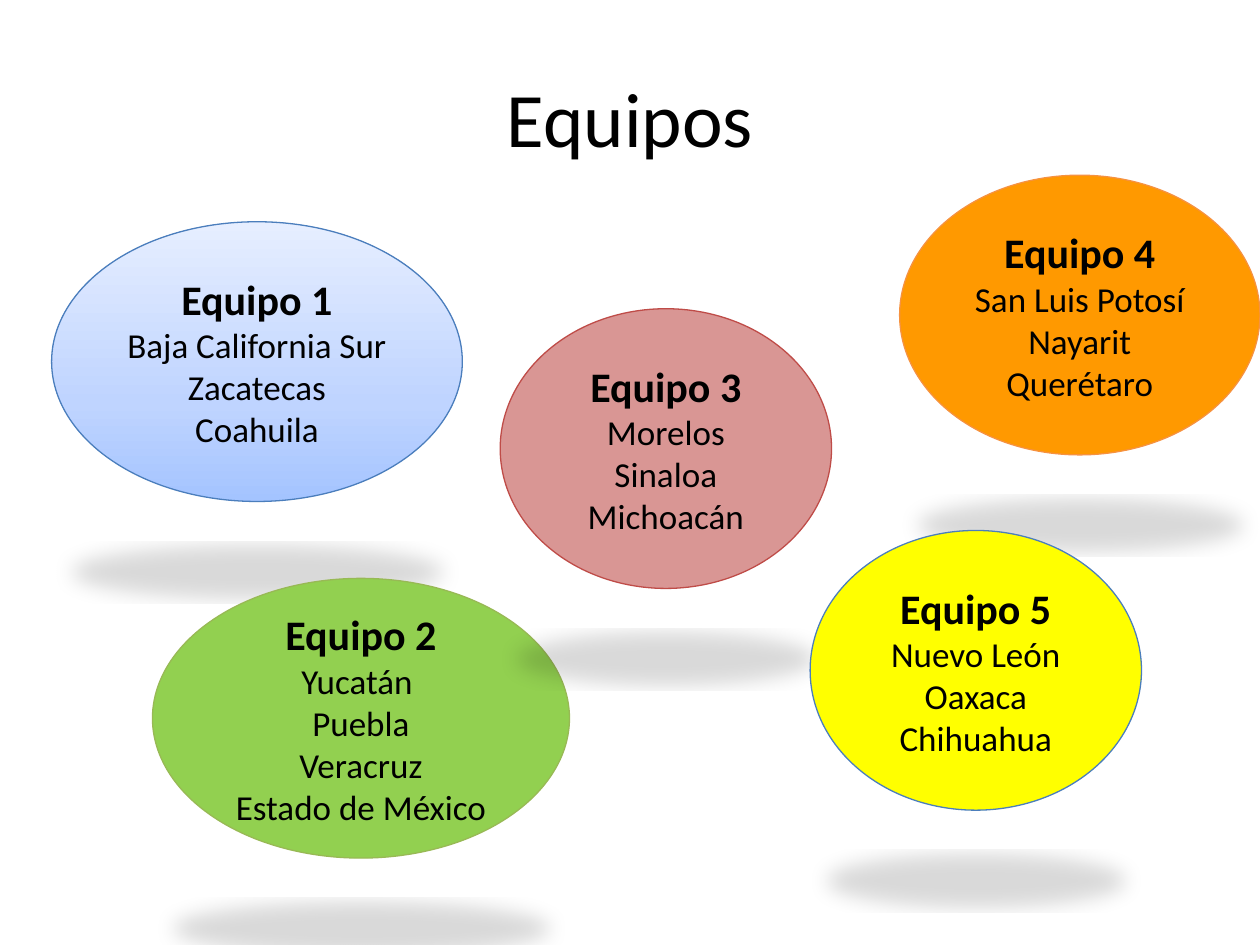
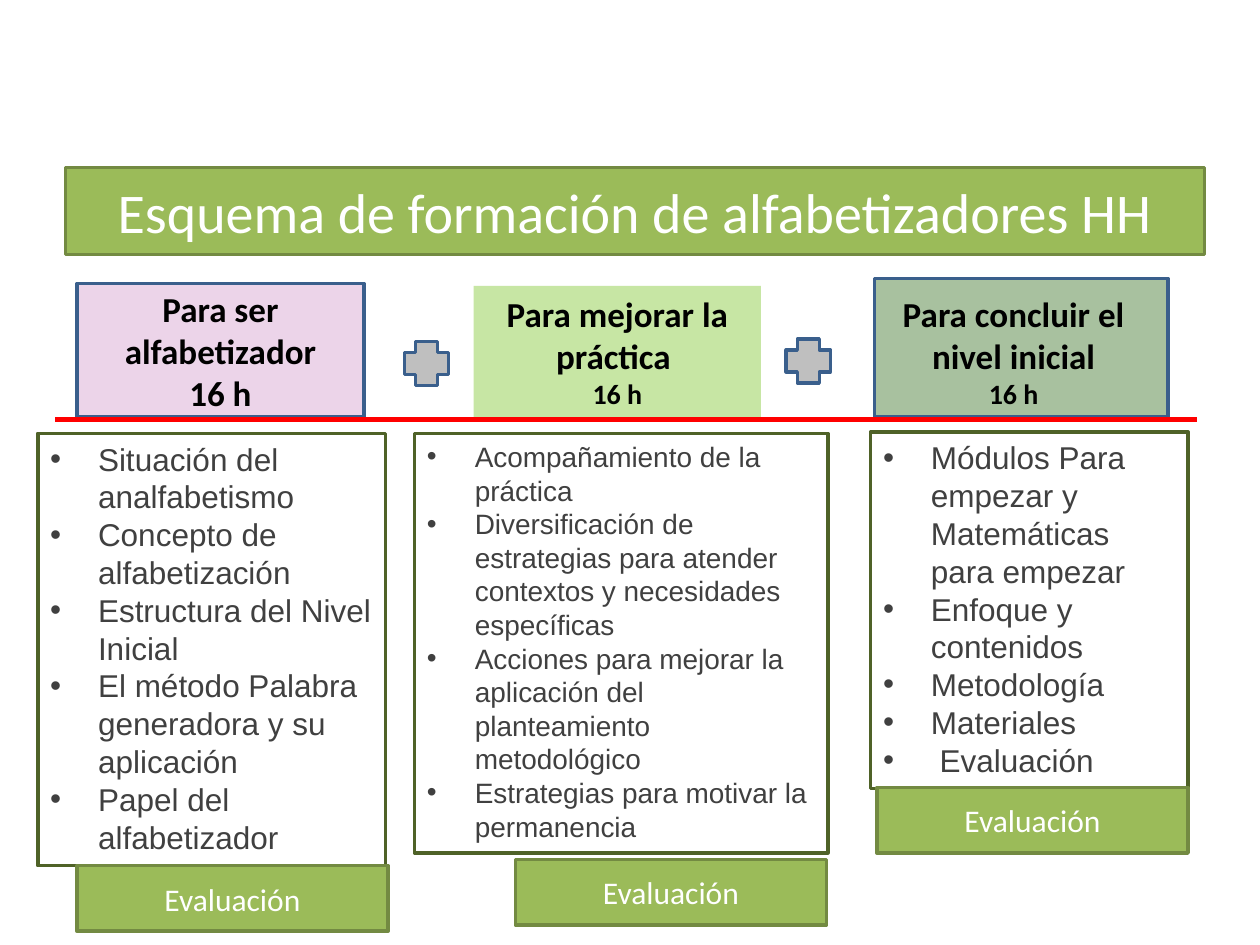
"""Builds two slides: the teams and the training scheme for literacy teachers."""
from lxml import etree
from pptx import Presentation
from pptx.dml.color import RGBColor
from pptx.enum.shapes import MSO_CONNECTOR, MSO_SHAPE
from pptx.enum.text import MSO_ANCHOR, PP_ALIGN
from pptx.oxml import parse_xml
from pptx.oxml.ns import nsdecls, qn
from pptx.util import Pt

PX = 9144
SLIDE_SIZE = (1000, 750)
COLORS = {
    "black": "000000", "white": "FFFFFF", "body": "404040", "red": "FF0000",
    "sky_dark": "A4C4FF", "sky_mid": "BFD4FF", "sky_light": "E6EEFF",
    "blue_edge": "4B7EBC", "lime": "92D050", "lime_edge": "98B955",
    "orange": "FF9900", "orange_edge": "F69240", "rose": "D99694",
    "rose_edge": "BF4C48", "yellow": "FFFF00", "navy": "3A5F8C",
    "lilac": "ECD4E9", "mint": "C7E6A4", "sage": "A8C19F", "gray": "BFBFBF",
    "forest": "4F6228", "green": "9BBB59", "green_edge": "738A42",
}

TEAMS_TITLE = ("Equipos", (50, 30, 900, 125))
SKY = [(0, "sky_dark"), (35, "sky_mid"), (100, "sky_light")]
TEAMS = [
    ("Equipo 1", ["Baja California Sur", "Zacatecas", "Coahuila"],
     (41, 176, 326), SKY, "blue_edge"),
    ("Equipo 2", ["Yucatán ", "Puebla", "Veracruz", "Estado de México"],
     (121, 459, 331), "lime", "lime_edge"),
    ("Equipo 4", ["San Luis Potosí", "Nayarit", "Querétaro"],
     (714, 139, 286), "orange", "orange_edge"),
    ("Equipo 3", ["Morelos", "Sinaloa", "Michoacán"],
     (397, 245, 263), "rose", "rose_edge"),
    ("Equipo 5", ["Nuevo León", "Oaxaca", "Chihuahua"],
     (643, 421, 263), "yellow", "blue_edge"),
]
TEAM_HEIGHT = 222

SCHEME_TITLE = ("Esquema de formación de alfabetizadores HH", (52, 133, 904, 69))
HOURS = "16 h"
STAGES = [
    {"name": "Para ser alfabetizador", "hours_size": 20, "fill": "lilac", "edge": "navy",
     "box": (61, 225, 228, 106), "text_box": (61, 225, 228, 106), "anchor": MSO_ANCHOR.MIDDLE,
     "topics": ["Situación del analfabetismo", "Concepto de alfabetización",
                "Estructura del Nivel Inicial",
                "El método Palabra generadora y su aplicación", "Papel del alfabetizador"],
     "topics_box": (30, 344, 276, 343), "topic_size": 18, "evaluation": (61, 687)},
    {"name": "Para mejorar la práctica ", "hours_size": 16, "fill": "mint", "edge": None,
     "box": (376, 227, 228, 104), "text_box": (376, 227, 228, 104), "anchor": MSO_ANCHOR.TOP,
     "topics": ["Acompañamiento de la práctica",
                "Diversificación de estrategias para atender contextos y necesidades específicas",
                "Acciones para mejorar la aplicación del planteamiento metodológico",
                "Estrategias para motivar la permanencia"],
     "topics_box": (329, 344, 328, 333), "topic_size": 16, "evaluation": (409, 682)},
    {"name": "Para concluir el nivel inicial", "hours_size": 16, "fill": "sage", "edge": "navy",
     "box": (694, 221, 233, 110), "text_box": (688, 227, 233, 104), "anchor": MSO_ANCHOR.TOP,
     "topics": ["Módulos Para empezar y Matemáticas para empezar", "Enfoque y contenidos",
                "Metodología", "Materiales", " Evaluación"],
     "topics_box": (691, 343, 252, 283), "topic_size": 18, "evaluation": (696, 625)},
]
PLUSES = [(321, 271), (624, 269)]
PLUS_SIDE = 35
DIVIDER = (44, 333, 950, 333)
EVALUATION = "Evaluación"
EVALUATION_SIZE = (247, 52)
BULLET_INDENT = 38


def emu(lengths):
    return [length * PX for length in lengths]


def rgb(name):
    return RGBColor.from_string(COLORS[name])


def add_box(slide, box, fill, edge=None, width=2, preset=MSO_SHAPE.RECTANGLE):
    shape = slide.shapes.add_shape(preset, *emu(box))
    shape.shadow.inherit = False
    if isinstance(fill, list):
        fill_gradient(shape, fill)
    else:
        shape.fill.solid()
        shape.fill.fore_color.rgb = rgb(fill)
    if edge:
        shape.line.color.rgb = rgb(edge)
        shape.line.width = Pt(width)
    else:
        shape.line.fill.background()
    return shape


def fill_gradient(shape, stops):
    marks = "".join(f'<a:gs pos="{place * 1000}"><a:srgbClr val="{COLORS[name]}"/></a:gs>'
                    for place, name in stops)
    gradient = parse_xml(f'<a:gradFill {nsdecls("a")} rotWithShape="1"><a:gsLst>{marks}</a:gsLst>'
                         '<a:lin ang="16200000" scaled="0"/></a:gradFill>')
    shape._element.spPr.find(qn("a:prstGeom")).addnext(gradient)


def cast_floor_shadow(shape):
    effects = shape._element.spPr.find(qn("a:effectLst"))
    effects.append(parse_xml(
        f'<a:outerShdw {nsdecls("a")} blurRad="152400" dist="317500" dir="5400000" '
        'sx="90000" sy="-19000" rotWithShape="0">'
        f'<a:srgbClr val="{COLORS["black"]}"><a:alpha val="15000"/></a:srgbClr></a:outerShdw>'))


def add_bullet(paragraph):
    properties = paragraph._p.get_or_add_pPr()
    properties.set("marL", str(BULLET_INDENT * PX))
    properties.set("indent", str(-BULLET_INDENT * PX))
    etree.SubElement(properties, qn("a:buFont")).set("typeface", "Arial")
    etree.SubElement(properties, qn("a:buChar")).set("char", "•")


def write(shape, lines, color="black", font="Calibri", anchor=MSO_ANCHOR.MIDDLE, bulleted=False):
    frame = shape.text_frame
    frame.word_wrap = True
    frame.vertical_anchor = anchor
    for index, (text, size, bold) in enumerate(lines):
        paragraph = frame.add_paragraph() if index else frame.paragraphs[0]
        paragraph.text = text
        paragraph.alignment = PP_ALIGN.LEFT if bulleted else PP_ALIGN.CENTER
        if bulleted:
            add_bullet(paragraph)
        paragraph.font.name = font
        paragraph.font.size = Pt(size)
        paragraph.font.bold = bold
        paragraph.font.color.rgb = rgb(color)


def add_green_band(slide, text, box, size):
    write(add_box(slide, box, "green", "green_edge"), [(text, size, False)], "white")


def build_teams(slide):
    title, title_box = TEAMS_TITLE
    write(slide.shapes.add_textbox(*emu(title_box)), [(title, 44, False)])
    for team, states, place, fill, edge in TEAMS:
        oval = add_box(slide, (*place, TEAM_HEIGHT), fill, edge, 0.75, MSO_SHAPE.OVAL)
        cast_floor_shadow(oval)
        write(oval, [(team, 24, True)] + [(state, 20, False) for state in states])


def build_scheme(slide):
    for stage in STAGES:
        heading = add_box(slide, stage["box"], stage["fill"], stage["edge"])
        if stage["text_box"] != stage["box"]:
            heading = slide.shapes.add_textbox(*emu(stage["text_box"]))
        write(heading, [(stage["name"], 20, True), (HOURS, stage["hours_size"], True)],
              anchor=stage["anchor"])
    for place in PLUSES:
        add_box(slide, (*place, PLUS_SIDE, PLUS_SIDE), "gray", "navy", preset=MSO_SHAPE.CROSS)
    for stage in STAGES:
        write(add_box(slide, stage["topics_box"], "white", "forest"),
              [(topic, stage["topic_size"], False) for topic in stage["topics"]],
              "body", "Arial", MSO_ANCHOR.TOP, bulleted=True)
    divider = slide.shapes.add_connector(MSO_CONNECTOR.STRAIGHT, *emu(DIVIDER))
    divider.line.color.rgb = rgb("red")
    divider.line.width = Pt(3)
    etree.SubElement(divider._element.spPr, qn("a:effectLst"))
    add_green_band(slide, *SCHEME_TITLE, 32)
    for stage in STAGES:
        add_green_band(slide, EVALUATION, stage["evaluation"] + EVALUATION_SIZE, 18)


def main():
    deck = Presentation()
    deck.slide_width, deck.slide_height = emu(SLIDE_SIZE)
    for build in (build_teams, build_scheme):
        build(deck.slides.add_slide(deck.slide_layouts[6]))
    deck.save("out.pptx")


if __name__ == "__main__":
    main()
